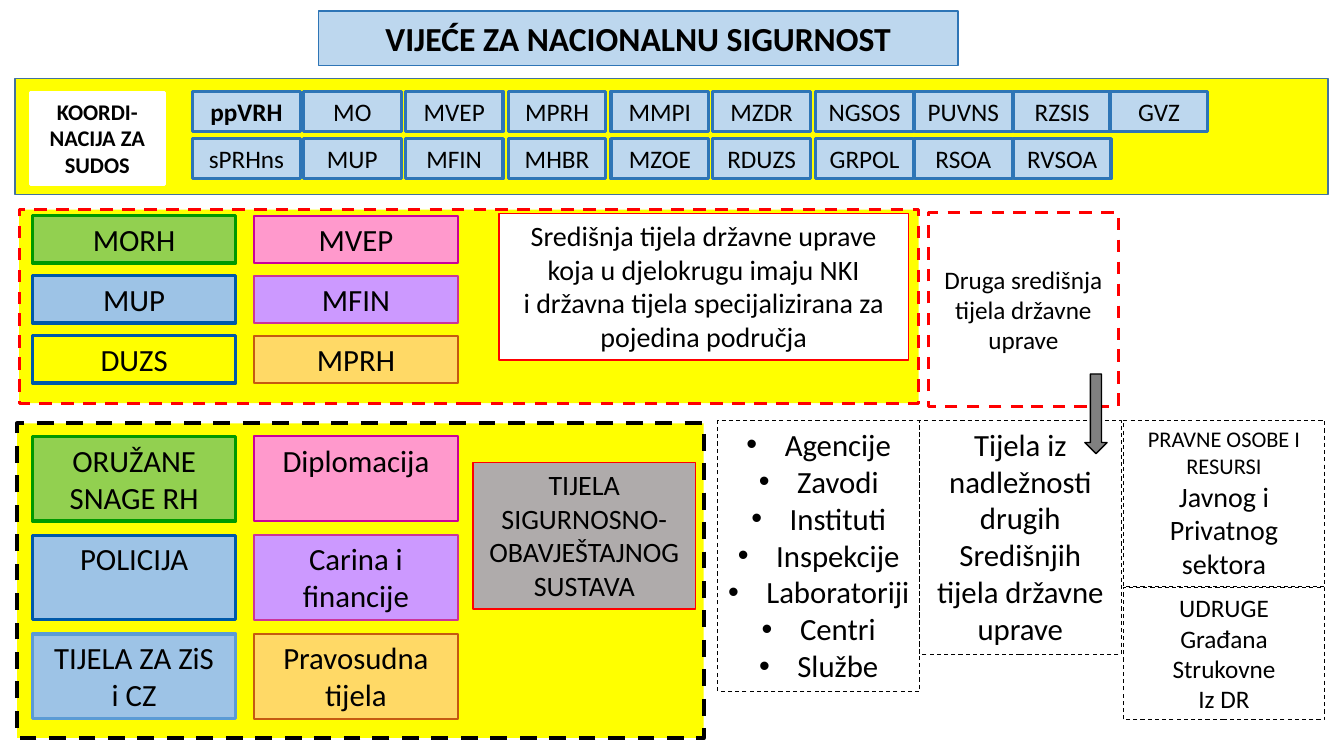
from itertools import product

from lxml.etree import SubElement
from pptx import Presentation
from pptx.dml.color import RGBColor
from pptx.enum.dml import MSO_LINE
from pptx.enum.shapes import MSO_SHAPE
from pptx.enum.text import MSO_ANCHOR, MSO_AUTO_SIZE, PP_ALIGN
from pptx.oxml.ns import qn
from pptx.util import Inches, Pt

BLACK = RGBColor(0x00, 0x00, 0x00)
WHITE = RGBColor(0xFF, 0xFF, 0xFF)
RED = RGBColor(0xFF, 0x00, 0x00)
YELLOW = RGBColor(0xFF, 0xFF, 0x00)
GREEN = RGBColor(0x92, 0xD0, 0x50)
DARK_GREEN = RGBColor(0x00, 0x99, 0x00)
BLUE = RGBColor(0x9D, 0xC3, 0xE6)
DARK_BLUE = RGBColor(0x00, 0x59, 0xA9)
MID_BLUE = RGBColor(0x5B, 0x9B, 0xD5)
PALE_BLUE = RGBColor(0xBD, 0xD7, 0xEE)
STEEL_BLUE = RGBColor(0x2E, 0x75, 0xB6)
SLATE_BLUE = RGBColor(0x43, 0x73, 0x9E)
PINK = RGBColor(0xFF, 0x99, 0xCC)
MAGENTA = RGBColor(0xCC, 0x00, 0x99)
VIOLET = RGBColor(0xCC, 0x99, 0xFF)
PLUM = RGBColor(0xCC, 0x33, 0x99)
GOLD = RGBColor(0xFF, 0xD9, 0x66)
ORANGE = RGBColor(0xC5, 0x5A, 0x11)
GREY = RGBColor(0xAF, 0xAB, 0xAB)
DARK_GREY = RGBColor(0x80, 0x80, 0x80)

COLUMNS, ROWS = 133.3, 75


class Chart:
    """One slide on a grid of COLUMNS by ROWS, with a shared style."""

    font_name = "Calibri"

    def __init__(self, deck):
        self.slide = deck.slides.add_slide(deck.slide_layouts[1])
        self.column = deck.slide_width / COLUMNS
        self.row = deck.slide_height / ROWS

    def place(self, at):
        left, top, width, height = at
        return [int(left * self.column), int(top * self.row),
                int(width * self.column), int(height * self.row)]

    def paint(self, shape, fill, line, weight, dashed=False):
        if fill is None:
            shape.fill.background()
        else:
            shape.fill.solid()
            shape.fill.fore_color.rgb = fill
        shape.line.color.rgb = line
        shape.line.width = Pt(weight)
        if dashed:
            shape.line.dash_style = MSO_LINE.DASH

    def label(self, shape, lines, sizes, bold=False, anchor=MSO_ANCHOR.TOP):
        """Fill in one paragraph per line; the last size serves the rest."""
        frame = shape.text_frame
        frame.word_wrap = True
        frame.auto_size = MSO_AUTO_SIZE.NONE
        frame.vertical_anchor = anchor
        frame.text = "\n".join(lines)
        for index, paragraph in enumerate(frame.paragraphs):
            paragraph.alignment = PP_ALIGN.CENTER
            paragraph.space_before = Pt(0)
            font = paragraph.font
            font.name = self.font_name
            font.size = Pt(sizes[min(index, len(sizes) - 1)])
            font.bold = bold
            font.color.rgb = BLACK

    def box(self, at, fill, line, weight, lines=(), sizes=(22,), dashed=False,
            bold=False, anchor=MSO_ANCHOR.TOP, kind=MSO_SHAPE.RECTANGLE):
        shape = self.slide.shapes.add_shape(kind, *self.place(at))
        shape.shadow.inherit = False
        self.paint(shape, fill, line, weight, dashed)
        if lines:
            self.label(shape, lines, sizes, bold, anchor)

    def fit(self, placeholder, at):
        (placeholder.left, placeholder.top,
         placeholder.width, placeholder.height) = self.place(at)

    def title(self, at, text):
        heading = self.slide.shapes.title
        self.fit(heading, at)
        self.paint(heading, PALE_BLUE, STEEL_BLUE, 1)
        self.label(heading, [text], [24], True, MSO_ANCHOR.MIDDLE)

    def bullets(self, at, items):
        body = self.slide.placeholders[1]
        self.fit(body, at)
        self.paint(body, None, BLACK, 0.75, True)
        self.label(body, items, [22])
        for paragraph in body.text_frame.paragraphs:
            properties = paragraph._p.get_or_add_pPr()
            properties.set("marL", str(Inches(0.38)))
            properties.set("indent", str(-Inches(0.38)))
            SubElement(properties, qn("a:buFont")).set("typeface", "Arial")
            SubElement(properties, qn("a:buChar")).set("char", "•")


def main():
    deck = Presentation()
    deck.slide_width, deck.slide_height = Inches(13.33), Inches(7.5)
    chart = Chart(deck)

    # Council and the coordination band
    chart.title((31.6, 1.1, 63.4, 5.4), "VIJEĆE ZA NACIONALNU SIGURNOST")
    chart.box((1.5, 7.8, 130.2, 11.5), YELLOW, SLATE_BLUE, 1)
    chart.box((3, 9.2, 13.3, 9.1), WHITE, WHITE, 2.25,
              ["KOORDI-", "NACIJA ZA SUDOS"], [16], bold=True)

    # Members of the coordination, one pair per column
    member_lefts = [19.1, 30.1, 40.2, 50.4, 60.6, 70.7, 80.9, 90.7, 100.5, 110.1]
    member_rows = {
        9.05: "ppVRH MO MVEP MPRH MMPI MZDR NGSOS PUVNS RZSIS GVZ",
        13.75: "sPRHns MUP MFIN MHBR MZOE RDUZS GRPOL RSOA RVSOA",
    }
    for top, members in member_rows.items():
        for left, member in zip(member_lefts, members.split()):
            width = 10.7 if left == member_lefts[0] else 9.7
            chart.box((left, top, width, 4), PALE_BLUE, STEEL_BLUE, 2.25,
                      [member], [18], bold=member == "ppVRH")

    # Yellow frames for the ministries and their bodies
    chart.box((1.9, 20.8, 89.2, 19.2), YELLOW, RED, 2.25, dashed=True)
    chart.box((1.7, 42, 68.1, 31.2), YELLOW, BLACK, 3, dashed=True)

    # Each ministry above, its body below, in two columns of three
    pairs = [
        ("MORH", ["ORUŽANE", "SNAGE RH"], GREEN, DARK_GREEN, DARK_GREEN, 2.25),
        ("MVEP", ["Diplomacija"], PINK, MAGENTA, MAGENTA, 1.5),
        ("MUP", ["POLICIJA"], BLUE, DARK_BLUE, DARK_BLUE, 2.25),
        ("MFIN", ["Carina i financije"], VIOLET, PLUM, PLUM, 1.5),
        ("DUZS", ["TIJELA ZA ZiS", "i CZ"], BLUE, DARK_BLUE, MID_BLUE, 2.25),
        ("MPRH", ["Pravosudna tijela"], GOLD, ORANGE, ORANGE, 1.5),
    ]
    for (rank, left), pair in zip(product(range(3), (3.2, 25.2)), pairs):
        ministry, body, fill, ministry_line, body_line, weight = pair
        ministry_fill = None if ministry == "DUZS" else fill
        chart.box((left, 21.4 + 5.95 * rank, 20.2, 4.7),
                  ministry_fill, ministry_line, weight, [ministry])
        chart.box((left, 43.3 + 9.8 * rank, 20.2, 8.4),
                  fill, body_line, weight, body)

    # Labels inside the frames
    chart.box((49.5, 21.2, 40.6, 14.5), WHITE, RED, 1,
              ["Središnja tijela državne uprave", "koja u djelokrugu imaju NKI",
               "i državna tijela specijalizirana za pojedina područja"], [20])
    chart.box((46.9, 45.9, 22.1, 14.5), GREY, RED, 1,
              ["TIJELA", "SIGURNOSNO-", "OBAVJEŠTAJNOG SUSTAVA"], [20])

    # Other bodies and the private sector
    chart.bullets((71.2, 41.7, 20, 26.9),
                  ["Agencije", "Zavodi", "Instituti", "Inspekcije",
                   "Laboratoriji", "Centri", "Službe"])
    chart.box((92.1, 21.1, 18.8, 19.2), WHITE, RED, 2.25,
              ["Druga središnja tijela državne uprave"], [18],
              dashed=True, anchor=MSO_ANCHOR.MIDDLE)
    outer_bodies = [
        ((91.2, 41.7, 20, 23.2), [22],
         ["Tijela iz nadležnosti drugih Središnjih tijela državne uprave"]),
        ((111.4, 41.7, 20, 16.5), [16, 20],
         ["PRAVNE OSOBE I RESURSI", "Javnog i", "Privatnog sektora"]),
        ((111.4, 58.3, 20, 13.1), [18],
         ["UDRUGE", "Građana", "Strukovne", "Iz DR"]),
    ]
    for at, sizes, lines in outer_bodies:
        chart.box(at, None, BLACK, 0.75, lines, sizes, dashed=True)
    chart.box((107.6, 37.1, 2.2, 7.9), DARK_GREY, BLACK, 1,
              kind=MSO_SHAPE.DOWN_ARROW)

    deck.save("out.pptx")


if __name__ == "__main__":
    main()
